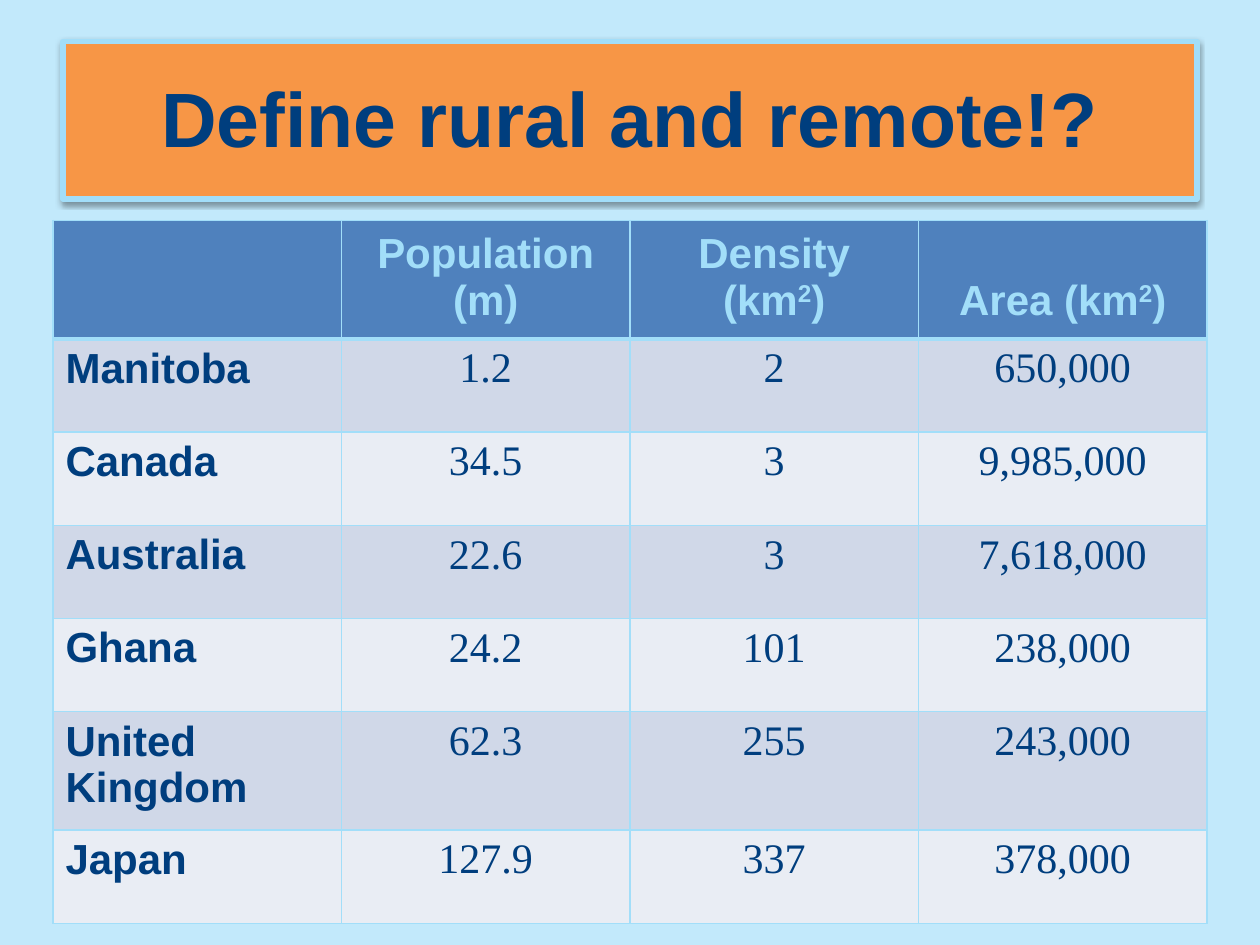
from dataclasses import dataclass

from lxml.etree import SubElement
from pptx import Presentation
from pptx.dml.color import RGBColor
from pptx.enum.shapes import MSO_SHAPE
from pptx.enum.text import MSO_ANCHOR, PP_ALIGN
from pptx.oxml import parse_xml
from pptx.oxml.ns import nsdecls, qn
from pptx.util import Inches, Pt


@dataclass(frozen=True)
class Theme:
    back: str = "C2E9FB"
    sky: str = "A2DEF9"
    navy: str = "003E7E"
    orange: str = "F79646"
    head: str = "4F81BD"
    bands: tuple = ("D0D8E8", "E9EDF4")
    sans: str = "Arial"
    serif: str = "Times New Roman"
    title: int = 44
    body: int = 24


@dataclass(frozen=True)
class Style:
    face: str
    size: int
    color: str
    bold: bool
    align: PP_ALIGN


@dataclass(frozen=True)
class Place:
    name: str
    people: str
    density: str
    area: str


THEME = Theme()
TITLE = Style(THEME.sans, THEME.title, THEME.navy, True, PP_ALIGN.CENTER)
HEAD = Style(THEME.sans, THEME.body, THEME.sky, True, PP_ALIGN.CENTER)
NAME = Style(THEME.sans, THEME.body, THEME.navy, True, PP_ALIGN.LEFT)
VALUE = Style(THEME.serif, THEME.body, THEME.navy, False, PP_ALIGN.CENTER)

HEADS = ("", "Population (m)", "Density (km²)", "Area (km²)")
PLACES = (
    Place("Manitoba", "1.2", "2", "650,000"),
    Place("Canada", "34.5", "3", "9,985,000"),
    Place("Australia", "22.6", "3", "7,618,000"),
    Place("Ghana", "24.2", "101", "238,000"),
    Place("United Kingdom", "62.3", "255", "243,000"),
    Place("Japan", "127.9", "337", "378,000"),
)
WIDE, HIGH = Inches(10), Inches(7.5)
LEFT, SPAN = WIDE // 20, WIDE * 9 // 10
DEEP = HIGH // 6
COL, SHORT, TALL = Inches(2.29), Inches(0.74), Inches(0.94)


def rgb(code: str) -> RGBColor:
    return RGBColor.from_string(code)


def write(frame, text: str, style: Style) -> None:
    """Fill a frame with one paragraph, raising the 2 of a square unit."""
    para = frame.paragraphs[0]
    para.alignment = style.align
    font = para.font
    font.name, font.size, font.bold = style.face, Pt(style.size), style.bold
    font.color.rgb = rgb(style.color)
    start, mark, rest = text.partition("²")
    for part in filter(None, (start, mark, rest)):
        run = para.add_run()
        run.text = "2" if part == "²" else part
        if part == "²":
            run._r.get_or_add_rPr().set("baseline", "30000")


def edge(cell, low: float) -> None:
    """Border a cell with 1 pt lines and a bottom line of low points."""
    props = cell._tc.get_or_add_tcPr()
    for spot, (side, width) in enumerate(zip("LRTB", (1, 1, 1, low))):
        props.insert(spot, parse_xml(
            f'<a:ln{side} {nsdecls("a")} w="{Pt(width)}"><a:solidFill>'
            f'<a:srgbClr val="{THEME.sky}"/></a:solidFill></a:ln{side}>'))


def paint(cell, text: str, style: Style, fill: str, low: float = 1) -> None:
    cell.fill.solid()
    cell.fill.fore_color.rgb = rgb(fill)
    edge(cell, low)
    write(cell.text_frame, text, style)


def shade(shape) -> None:
    """Give a shape a soft shadow that falls straight down."""
    shape.shadow.inherit = False
    effects = shape._element.spPr.find(qn("a:effectLst"))
    cast = SubElement(effects, qn("a:outerShdw"), blurRad=str(Pt(3.1)),
                      dist=str(Pt(1.6)), dir="5400000", rotWithShape="0")
    color = SubElement(cast, qn("a:srgbClr"), val="000000")
    SubElement(color, qn("a:alpha"), val="38000")


def banner(slide) -> None:
    title = slide.shapes.title
    title.left, title.top, title.width, title.height = LEFT, Inches(0.3), SPAN, DEEP
    title.text_frame.vertical_anchor = MSO_ANCHOR.MIDDLE
    write(title.text_frame, "Define rural and remote!?", TITLE)
    panel = slide.shapes.add_shape(MSO_SHAPE.RECTANGLE, LEFT, Inches(0.33), SPAN, DEEP)
    panel.fill.solid()
    panel.fill.fore_color.rgb = rgb(THEME.orange)
    panel.line.color.rgb = rgb(THEME.sky)
    panel.line.width = Pt(3)
    shade(panel)
    title._element.addprevious(panel._element)


def grid(slide) -> None:
    rows, cols = len(PLACES) + 1, len(HEADS)
    table = slide.shapes.add_table(
        rows, cols, (WIDE - cols * COL) // 2, Inches(1.75),
        cols * COL, 2 * TALL + (rows - 2) * SHORT).table
    for col in table.columns:
        col.width = COL
    for row, label in zip(table.rows, ("", *(place.name for place in PLACES))):
        row.height = TALL if label in ("", "United Kingdom") else SHORT
    for cell, text in zip(table.rows[0].cells, HEADS):
        paint(cell, text, HEAD, THEME.head, 3)
        cell.vertical_anchor = MSO_ANCHOR.BOTTOM
        cell.margin_bottom = Inches(0.12)
    for index, place in enumerate(PLACES):
        texts = (place.name, place.people, place.density, place.area)
        for spot, text in enumerate(texts):
            paint(table.cell(index + 1, spot), text,
                  VALUE if spot else NAME, THEME.bands[index % 2])


def main() -> None:
    deck = Presentation()
    deck.slide_width, deck.slide_height = WIDE, HIGH
    slide = deck.slides.add_slide(deck.slide_layouts[5])
    slide.background.fill.solid()
    slide.background.fill.fore_color.rgb = rgb(THEME.back)
    banner(slide)
    grid(slide)
    deck.save("out.pptx")


if __name__ == "__main__":
    main()
